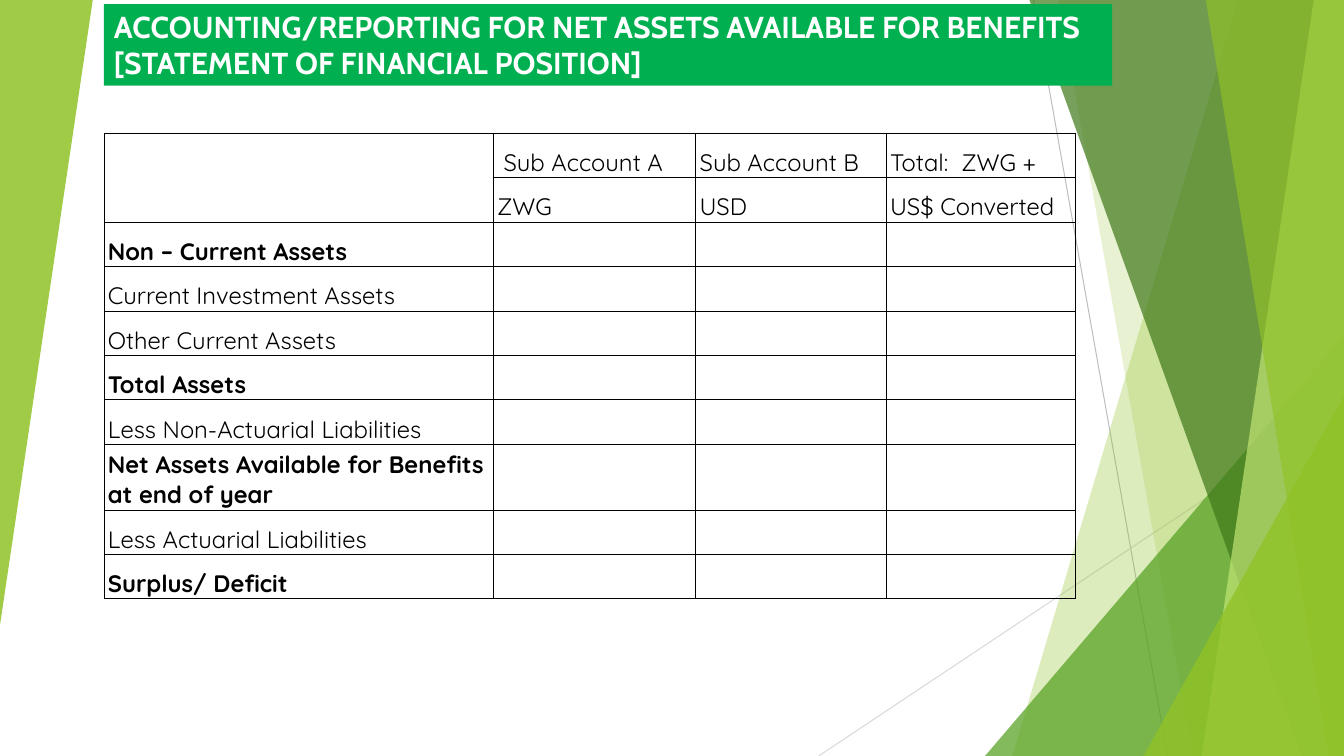
from dataclasses import dataclass

from lxml.etree import SubElement
from pptx import Presentation
from pptx.dml.color import RGBColor
from pptx.enum.shapes import MSO_CONNECTOR, MSO_SHAPE
from pptx.enum.text import MSO_ANCHOR, MSO_AUTO_SIZE, PP_ALIGN
from pptx.oxml.ns import qn
from pptx.util import Emu, Inches, Pt


@dataclass(frozen=True)
class Theme:
    heading_font: str = "Cabin"
    body_font: str = "Quicksand"
    heading_size: float = 21.6
    body_size: float = 17
    banner: str = "00B050"
    white: str = "FFFFFF"
    black: str = "000000"
    lime: str = "90C226"
    pale_lime: str = "C0E474"
    green: str = "54A021"
    dark_green: str = "3F7819"
    gray: str = "BFBFBF"
    light_gray: str = "D9D9D9"
    border_width: float = 0.5
    hairline: float = 0.75


@dataclass(frozen=True)
class Box:
    """A region in inches; x and y turn percentages of it into positions."""
    left: float
    top: float
    width: float
    height: float

    def x(self, percent):
        return Inches(self.left + self.width * percent / 100)

    def y(self, percent):
        return Inches(self.top + self.height * percent / 100)

    def frame(self, left=0, top=0):
        """Place a part from (left, top) to the lower right corner."""
        x, y = self.x(left), self.y(top)
        return x, y, self.x(100) - x, self.y(100) - y


THEME = Theme()
SLIDE = Box(0, 0, 13.33, 7.5)
TITLE_BOX = Box(1.03, 0.04, 10, 0.81)
TABLE_BOX = Box(1.03, 1.32, 9.64, 4.62)
RIGHT_PANEL = Box(8.12, 0, 5.21, 7.5)
LEFT_WEDGE = Box(0, 0, 0.92, 6.2)

TITLE = ("ACCOUNTING/REPORTING FOR NET ASSETS AVAILABLE FOR BENEFITS\n"
         "[STATEMENT OF FINANCIAL POSITION]")
COLUMN_WEIGHTS = [3.86, 2.01, 1.89, 1.88]
HEADINGS = [
    ["", " Sub Account A", "Sub Account B", "Total:  ZWG +"],
    ["", "ZWG", "USD", "US$ Converted"],
]
# Row label, bold, row weight
STATEMENT_LINES = [
    ("Non – Current Assets", True, 0.44),
    ("Current Investment Assets", False, 0.44),
    ("Other Current Assets", False, 0.44),
    ("Total Assets", True, 0.44),
    ("Less Non-Actuarial Liabilities", False, 0.44),
    ("Net Assets Available for Benefits at end of year", True, 0.65),
    ("Less Actuarial Liabilities", False, 0.44),
    ("Surplus/ Deficit", True, 0.44),
]


def write_text(text_frame, text, *, font, size, color, bold=False):
    paragraph = text_frame.paragraphs[0]
    paragraph.alignment = PP_ALIGN.LEFT
    for number, line in enumerate(text.split("\n")):
        if number:
            paragraph.add_line_break()
        run = paragraph.add_run()
        run.text = line
        run.font.name = font
        run.font.size = Pt(size)
        run.font.bold = bold
        run.font.color.rgb = RGBColor.from_string(color)


def paint(shape, color, opacity):
    shape.shadow.inherit = False
    shape.line.fill.background()
    shape.fill.solid()
    shape.fill.fore_color.rgb = RGBColor.from_string(color)
    color_element = next(shape.element.spPr.iter(qn("a:srgbClr")))
    SubElement(color_element, qn("a:alpha"), val=str(opacity * 1000))


def add_hairline(slide, box, start, end, color):
    line = slide.shapes.add_connector(
        MSO_CONNECTOR.STRAIGHT, box.x(start[0]), box.y(start[1]),
        box.x(end[0]), box.y(end[1]))
    line.line.width = Pt(THEME.hairline)
    line.line.color.rgb = RGBColor.from_string(color)
    SubElement(line.element.spPr, qn("a:effectLst"))


def add_slab(slide, box, top_x, bottom_x, color, opacity):
    """Full-height facet with a slanted left side."""
    builder = slide.shapes.build_freeform(box.x(top_x), box.y(0))
    corners = [(100, 0), (100, 100), (bottom_x, 100)]
    builder.add_line_segments([(box.x(x), box.y(y)) for x, y in corners])
    paint(builder.convert_to_shape(), color, opacity)


def add_wedge(slide, box, left, top, color, opacity):
    """Right triangle that ends in the lower right corner of the box."""
    wedge = slide.shapes.add_shape(
        MSO_SHAPE.ISOSCELES_TRIANGLE, *box.frame(left, top))
    wedge.adjustments[0] = 1
    paint(wedge, color, opacity)
    return wedge


def add_facets(slide, panel, left_wedge):
    add_hairline(slide, panel, (40.88, 0), (66.41, 100), THEME.gray)
    add_hairline(slide, panel, (100, 53.73), (0, 100), THEME.light_gray)
    # Back to front: builder, two positions, colour, opacity
    facets = [
        (add_slab, 79.85, 36.85, THEME.lime, 30),
        (add_slab, 45.68, 71.21, THEME.lime, 20),
        (add_wedge, 31.67, 44.4, THEME.green, 72),
        (add_slab, 40.12, 91.94, THEME.dark_green, 70),
        (add_slab, 94.24, 72.94, THEME.pale_lime, 70),
        (add_slab, 73.7, 97.12, THEME.lime, 65),
        (add_wedge, 61.8, 52.4, THEME.lime, 80),
    ]
    for add_facet, first, second, color, opacity in facets:
        add_facet(slide, panel, first, second, color, opacity)
    add_wedge(slide, left_wedge, 0, 0, THEME.lime, 85).rotation = 180


def place_title(slide, box):
    title = slide.shapes.title
    title.left, title.top, title.width, title.height = box.frame()
    title.fill.solid()
    title.fill.fore_color.rgb = RGBColor.from_string(THEME.banner)
    text_frame = title.text_frame
    text_frame.word_wrap = True
    text_frame.auto_size = MSO_AUTO_SIZE.NONE
    text_frame.vertical_anchor = MSO_ANCHOR.BOTTOM
    write_text(text_frame, TITLE, font=THEME.heading_font,
               size=THEME.heading_size, color=THEME.white, bold=True)
    # Bring the banner in front of the facets
    slide.shapes.element.append(title.element)


def format_cell(cell):
    properties = cell._tc.get_or_add_tcPr()
    for side in ("a:lnL", "a:lnR", "a:lnT", "a:lnB"):
        border = SubElement(properties, qn(side), w=str(Pt(THEME.border_width)))
        fill = SubElement(border, qn("a:solidFill"))
        SubElement(fill, qn("a:srgbClr"), val=THEME.black)
    cell.fill.background()
    cell.vertical_anchor = MSO_ANCHOR.BOTTOM
    cell.margin_left = cell.margin_right = Inches(0.04)
    cell.margin_top, cell.margin_bottom = Inches(0.01), 0


def add_statement(slide, box):
    rows = [(texts, False, 0.44) for texts in HEADINGS]
    rows += [([label, "", "", ""], bold, weight)
             for label, bold, weight in STATEMENT_LINES]
    table = slide.shapes.add_table(
        len(rows), len(COLUMN_WEIGHTS), *box.frame()).table
    table.first_row = table.horz_banding = False
    for column, weight in zip(table.columns, COLUMN_WEIGHTS):
        column.width = Emu(int(Inches(box.width) * weight / sum(COLUMN_WEIGHTS)))
    total_weight = sum(weight for _, _, weight in rows)
    for row, (texts, bold, weight) in zip(table.rows, rows):
        row.height = Emu(int(Inches(box.height) * weight / total_weight))
        for cell, text in zip(row.cells, texts):
            format_cell(cell)
            if text:
                write_text(cell.text_frame, text, font=THEME.body_font,
                           size=THEME.body_size, color=THEME.black, bold=bold)
    table.cell(0, 0).merge(table.cell(1, 0))


def main():
    presentation = Presentation()
    presentation.slide_width = Inches(SLIDE.width)
    presentation.slide_height = Inches(SLIDE.height)
    title_only = presentation.slide_layouts[5]
    slide = presentation.slides.add_slide(title_only)
    add_facets(slide, RIGHT_PANEL, LEFT_WEDGE)
    place_title(slide, TITLE_BOX)
    add_statement(slide, TABLE_BOX)
    presentation.save("out.pptx")


if __name__ == "__main__":
    main()
